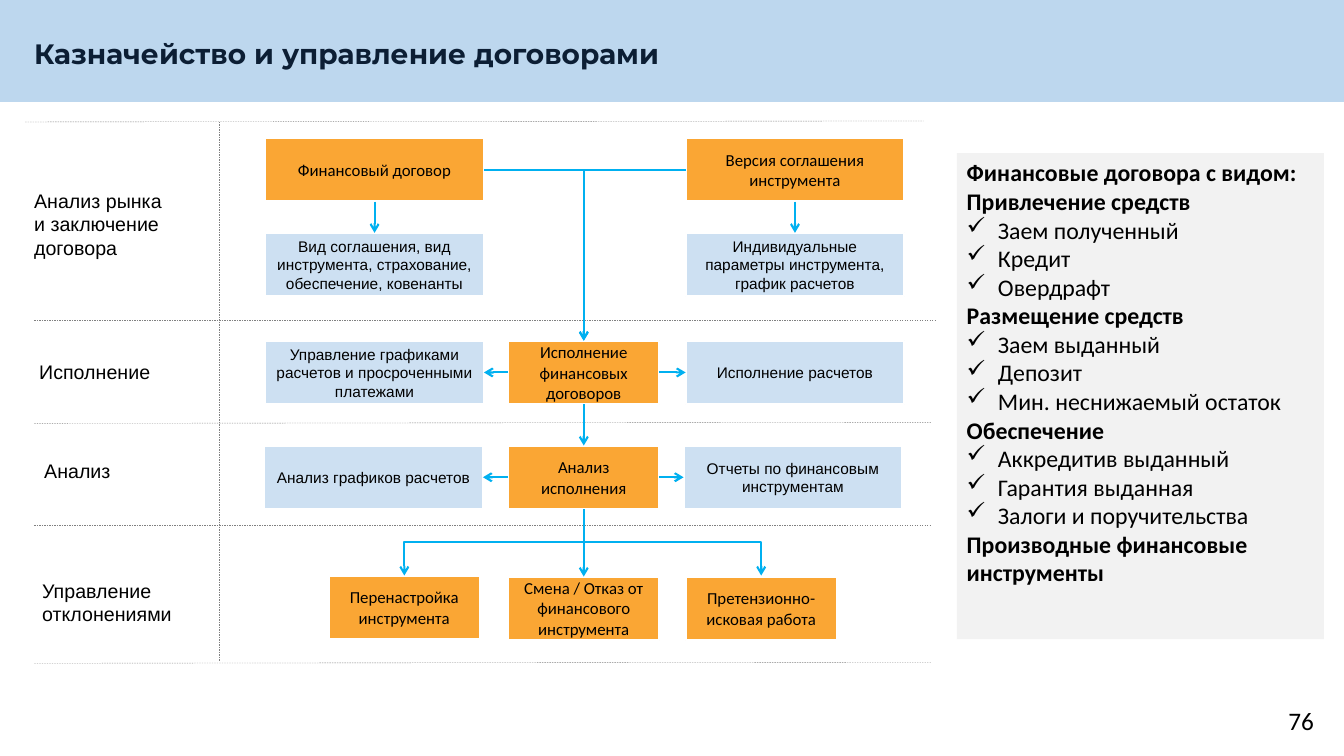
from lxml import etree
from pptx import Presentation
from pptx.dml.color import RGBColor
from pptx.enum.dml import MSO_LINE
from pptx.enum.shapes import MSO_CONNECTOR as CONN, MSO_SHAPE as SHAPE
from pptx.enum.text import MSO_ANCHOR as ANCHOR, PP_ALIGN as ALIGN
from pptx.oxml.ns import qn
from pptx.util import Emu, Pt

PX = 9144  # 100 px to the inch
BOX_H = 63
TOP, LEFT, BOTTOM, RIGHT = range(4)
COLORS = {"band": "BDD7EE", "panel": "F2F2F2", "title": "0C1E34", "text": "000000",
          "step": "FAA634", "detail": "9DC3E6", "border": "FFFFFF",
          "arrow": "00B0F0", "grid": "808080"}
FONTS = {
    "title": {"name": "Montserrat", "size": Pt(20), "bold": True},
    "step": {"name": "Calibri", "size": Pt(12)},
    "detail": {"name": "Arial", "size": Pt(11)},
    "stage": {"name": "Arial", "size": Pt(14)},
    "heading": {"name": "Calibri", "size": Pt(17), "bold": True},
    "item": {"name": "Calibri", "size": Pt(17), "bold": False},
    "page": {"name": "Calibri", "size": Pt(18)},
}

# key: kind, left, top, width, text
BOXES = {
    "contract": ("step", 263, 137, 217, "Финансовый договор"),
    "version": ("step", 680, 137, 217, "Версия соглашения инструмента"),
    "terms": ("detail", 263, 231, 217,
              "Вид соглашения, вид инструмента, страхование, обеспечение, ковенанты"),
    "params": ("detail", 680, 231, 217,
               "Индивидуальные параметры инструмента, график расчетов"),
    "schedules": ("detail", 263, 338, 217,
                  "Управление графиками расчетов и просроченными платежами"),
    "execution": ("step", 504, 338, 150, "Исполнение финансовых договоров"),
    "settlement": ("detail", 680, 338, 217, "Исполнение расчетов"),
    "charts": ("detail", 262, 442, 217, "Анализ графиков расчетов"),
    "analysis": ("step", 504, 442, 150, "Анализ исполнения"),
    "reports": ("detail", 678, 442, 217, "Отчеты по финансовым инструментам"),
    "resetup": ("step", 326, 571, 150, "Перенастройка инструмента"),
    "change": ("step", 504, 572, 150, "Смена / Отказ от финансового инструмента"),
    "claims": ("step", 680, 572, 150, "Претензионно-исковая работа"),
}
ARROWS = [
    ("contract", BOTTOM, "terms", TOP),
    ("version", BOTTOM, "params", TOP),
    ("execution", LEFT, "schedules", RIGHT),
    ("execution", RIGHT, "settlement", LEFT),
    ("execution", BOTTOM, "analysis", TOP),
    ("analysis", LEFT, "charts", RIGHT),
    ("analysis", RIGHT, "reports", LEFT),
    ("analysis", BOTTOM, "change", TOP),
]
GRID = [(25, 121, 916, 120), (34, 318, 929, 318), (34, 420, 924, 419),
        (34, 521, 924, 521), (34, 658, 924, 657), (217, 121, 217, 656)]
STAGES = [
    (24, 182, 155, 81, ["Анализ рынка", "и заключение", "договора"], False),
    (29, 352, 131, 34, ["Исполнение"], False),
    (34, 450, 86, 34, ["Анализ"], False),
    (32, 569, 186, 57, ["Управление отклонениями"], True),
]
CONTRACT_TYPES = [
    ("Финансовые договора с видом:", []),
    ("Привлечение средств", ["Заем полученный", "Кредит", "Овердрафт"]),
    ("Размещение средств", ["Заем выданный", "Депозит", "Мин. неснижаемый остаток"]),
    ("Обеспечение", ["Аккредитив выданный", "Гарантия выданная", "Залоги и поручительства"]),
    ("Производные финансовые инструменты", []),
]


def px(*values):
    return [Emu(v * PX) for v in values]


def rgb(name):
    return RGBColor.from_string(COLORS[name])


def style(p, font, color="text", align=ALIGN.LEFT):
    p.alignment = align
    for r in p.runs:
        for key, value in FONTS[font].items():
            setattr(r.font, key, value)
        r.font.color.rgb = rgb(color)


def add_check_mark(p):
    pPr = p._p.get_or_add_pPr()
    pPr.set("marL", str(31 * PX))
    pPr.set("indent", str(-31 * PX))
    etree.SubElement(pPr, qn("a:buChar")).set("char", "✓")


def add_text(s, x, y, w, h, lines, wrap=True, **fmt):
    """Lines are (text, font, has check mark)."""
    tf = s.shapes.add_textbox(*px(x, y, w, h)).text_frame
    tf.word_wrap = wrap
    for i, (text, font, checked) in enumerate(lines):
        p = tf.paragraphs[0] if i == 0 else tf.add_paragraph()
        if checked:
            add_check_mark(p)
        p.add_run().text = text
        style(p, font, **fmt)


def add_rect(s, x, y, w, h, fill):
    sp = s.shapes.add_shape(SHAPE.RECTANGLE, *px(x, y, w, h))
    sp.shadow.inherit = False
    sp.fill.solid()
    sp.fill.fore_color.rgb = rgb(fill)
    sp.line.fill.background()
    return sp


def add_box(s, kind, x, y, w, text):
    sp = add_rect(s, x, y, w, BOX_H, kind)
    sp.line.color.rgb = rgb("border")
    sp.line.width = Pt(1.5)
    if kind == "detail":
        color = sp._element.spPr.find(qn("a:solidFill"))[0]
        etree.SubElement(color, qn("a:alpha")).set("val", "50000")
    tf = sp.text_frame
    tf.word_wrap = True
    tf.vertical_anchor = ANCHOR.MIDDLE
    p = tf.paragraphs[0]
    p.add_run().text = text
    style(p, kind, align=ALIGN.CENTER)
    return sp


def add_line(s, points, color, width, kind=CONN.STRAIGHT):
    cxn = s.shapes.add_connector(kind, *px(*points))
    cxn.line.color.rgb = rgb(color)
    cxn.line.width = Pt(width)
    etree.SubElement(cxn._element.spPr, qn("a:effectLst"))
    return cxn


def add_arrow(s, points=(0, 0, 0, 0), kind=CONN.STRAIGHT):
    cxn = add_line(s, points, "arrow", 1.5, kind)
    ln = cxn.line._get_or_add_ln()
    etree.SubElement(ln, qn("a:tailEnd")).set("type", "arrow")
    return cxn


def add_corner_arrow(s, *points):
    """One bend: across, then down."""
    cxn = add_arrow(s, points, CONN.ELBOW)
    cxn._element.spPr.find(qn("a:prstGeom")).set("prst", "bentConnector2")


def add_branch_arrow(s, x1, y1, x2, y2):
    """Two bends: down, across, down; an elbow turned by a quarter."""
    cx, cy = (x1 + x2) / 2, (y1 + y2) / 2
    half_w, half_h = (y2 - y1) / 2, abs(x2 - x1) / 2
    side = 1 if x2 > x1 else -1
    points = (cx + side * half_w, cy - half_h, cx - side * half_w, cy + half_h)
    cxn = add_arrow(s, [round(v) for v in points], CONN.ELBOW)
    degrees = 270 if side > 0 else 90
    cxn._element.spPr.find(qn("a:xfrm")).set("rot", str(degrees * 60000))


def main():
    prs = Presentation()
    prs.slide_width, prs.slide_height = px(1333, 750)
    s = prs.slides.add_slide(prs.slide_layouts[6])

    # Header
    add_rect(s, 0, -1, 1333, 102, "band")
    add_text(s, 24, 31, 667, 44,
             [("Казначейство и управление договорами", "title", False)], color="title")

    # Panel with contract types
    add_rect(s, 949, 152, 364, 482, "panel")
    lines = []
    for heading, items in CONTRACT_TYPES:
        lines.append((heading, "heading", False))
        lines += [(item, "item", True) for item in items]
    add_text(s, 949, 152, 364, 530, lines)

    # Stage grid and names
    for points in GRID:
        add_line(s, points, "grid", 0.25).line.dash_style = MSO_LINE.DASH
    for x, y, w, h, names, wrap in STAGES:
        add_text(s, x, y, w, h, [(name, "stage", False) for name in names], wrap)

    # Flowchart
    boxes = {key: add_box(s, *box) for key, box in BOXES.items()}
    for start, start_side, end, end_side in ARROWS:
        cxn = add_arrow(s)
        cxn.begin_connect(boxes[start], start_side)
        cxn.end_connect(boxes[end], end_side)
    for x in (480, 680):
        add_corner_arrow(s, x, 169, 579, 338)
    for x, y in ((401, 571), (755, 572)):
        add_branch_arrow(s, 579, 505, x, y)

    # Page number
    add_text(s, 1013, 695, 300, 40, [("76", "page", False)], align=ALIGN.RIGHT)
    prs.save("out.pptx")


if __name__ == "__main__":
    main()
